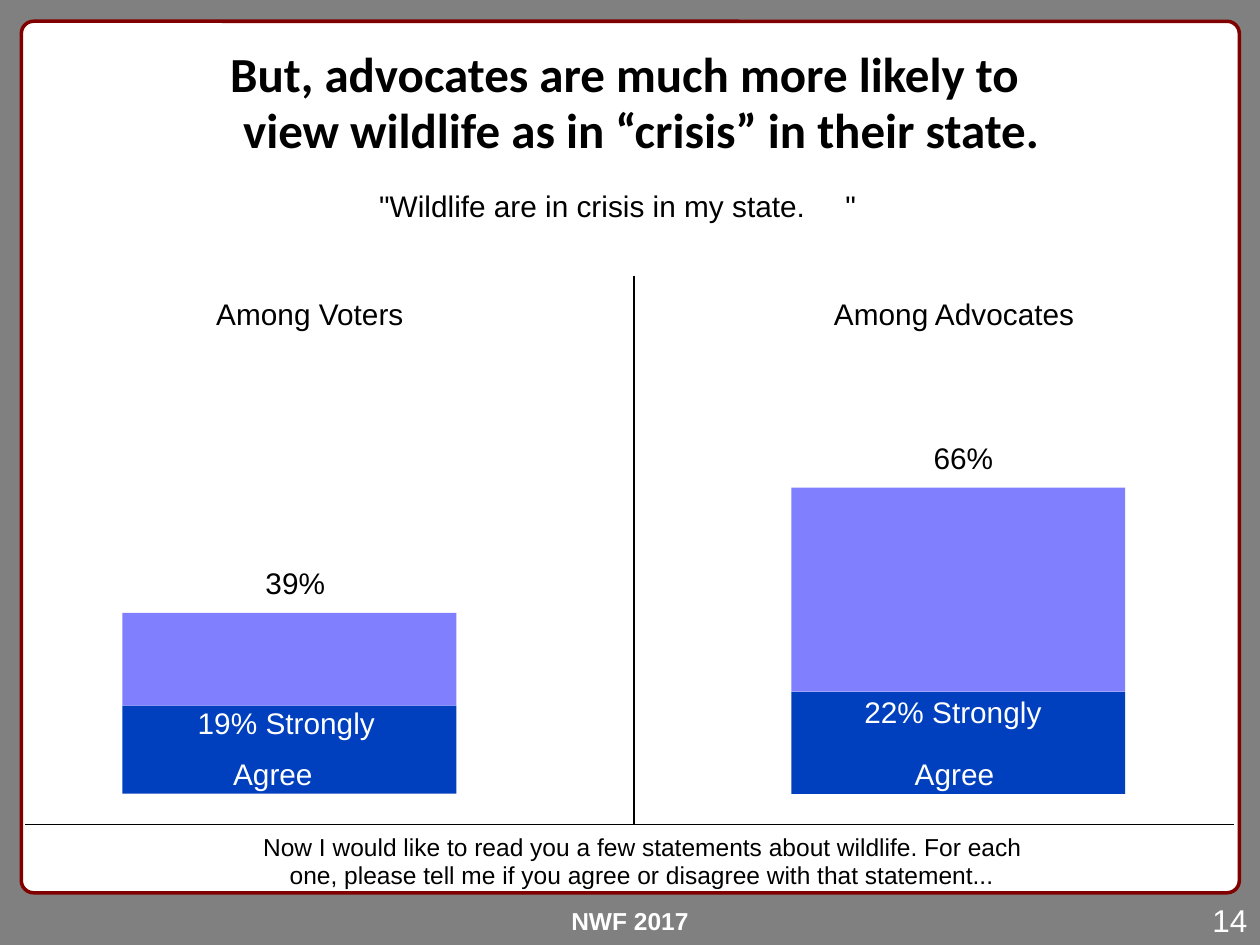
from dataclasses import dataclass

from lxml.etree import SubElement
from pptx import Presentation
from pptx.dml.color import RGBColor
from pptx.enum.shapes import MSO_CONNECTOR, MSO_SHAPE
from pptx.enum.text import PP_ALIGN
from pptx.oxml.ns import qn
from pptx.util import Pt


@dataclass(frozen=True)
class Theme:
    back: str = "808080"
    white: str = "FFFFFF"
    black: str = "000000"
    frame: str = "800000"
    dark: str = "0040BF"
    light: str = "8080FF"
    sans: str = "Arial"
    head: str = "Calibri"
    title: int = 28
    page: int = 18
    body: int = 17
    note: int = 14


@dataclass(frozen=True)
class Label:
    text: str
    left: float
    top: float
    width: float
    height: float = 20.2
    size: int = Theme.body
    color: str = Theme.black
    font: str = Theme.sans
    bold: bool = False
    align: PP_ALIGN = PP_ALIGN.LEFT


@dataclass(frozen=True)
class Group:
    name: str
    strong: int
    total: int
    left: float
    name_x: float
    total_x: float
    strong_x: float
    strong_y: float
    agree_x: float


THEME = Theme()
BASE = 453.6    # foot of the bars
UNIT = 2.65     # bar height for one percent
BAR = 190.8     # bar width


def paint(fill, color: str) -> None:
    fill.solid()
    fill.fore_color.rgb = RGBColor.from_string(color)


def write(slide, item: Label) -> None:
    box = slide.shapes.add_textbox(
        Pt(item.left), Pt(item.top), Pt(item.width), Pt(item.height))
    frame = box.text_frame
    frame.margin_left = frame.margin_right = 0
    frame.margin_top = frame.margin_bottom = 0
    frame.word_wrap = False
    frame.text = item.text
    para = frame.paragraphs[0]
    para.alignment = item.align
    font = para.runs[0].font
    font.name, font.size, font.bold = item.font, Pt(item.size), item.bold
    font.color.rgb = RGBColor.from_string(item.color)


def block(slide, left: float, top: float, height: float, color: str) -> None:
    rect = slide.shapes.add_shape(
        MSO_SHAPE.RECTANGLE, Pt(left), Pt(top), Pt(BAR), Pt(height))
    rect.shadow.inherit = False
    paint(rect.fill, color)
    rect.line.fill.background()


def rule(slide, x1: float, y1: float, x2: float, y2: float,
         width: float) -> None:
    line = slide.shapes.add_connector(
        MSO_CONNECTOR.STRAIGHT, Pt(x1), Pt(y1), Pt(x2), Pt(y2))
    line.line.width = Pt(width)
    paint(line.line.fill, THEME.black)
    SubElement(line._element.spPr, qn("a:effectLst"))


def column(slide, group: Group) -> None:
    mid = BASE - group.strong * UNIT
    top = BASE - group.total * UNIT
    block(slide, group.left, mid, BASE - mid, THEME.dark)
    block(slide, group.left, top, mid - top, THEME.light)
    write(slide, Label(group.name, group.name_x, 169.2, 150))
    write(slide, Label(f"{group.total}%", group.total_x, top - 27.7, 48))
    write(slide, Label(f"{group.strong}% Strongly", group.strong_x,
                       group.strong_y, 108, color=THEME.white))
    write(slide, Label("Agree", group.agree_x, 432, 60, color=THEME.white))


def panel(slide) -> None:
    card = slide.shapes.add_shape(
        MSO_SHAPE.ROUNDED_RECTANGLE, Pt(12.2), Pt(12.2), Pt(696), Pt(498))
    card.adjustments[0] = 0.014
    card.shadow.inherit = False
    paint(card.fill, THEME.white)
    paint(card.line.fill, THEME.frame)
    card.line.width = Pt(2)


LABELS = [
    # Footer
    Label("NWF 2017", 174, 517.7, 372, 17, THEME.note, THEME.white,
          bold=True, align=PP_ALIGN.CENTER),
    Label("14", 609, 514.6, 103.8, 21.6, THEME.page, THEME.white,
          align=PP_ALIGN.RIGHT),
    # Title
    Label("But, advocates are much more likely to", 125.8, 25, 462, 34,
          THEME.title, font=THEME.head, bold=True, align=PP_ALIGN.CENTER),
    Label("view wildlife as in “crisis” in their state.", 99.3, 56.9, 534, 34,
          THEME.title, font=THEME.head, bold=True, align=PP_ALIGN.CENTER),
    # Statement
    Label('"Wildlife are in crisis in my state.', 216.7, 107.3, 266.4),
    Label('"', 483.1, 107.3, 12),
    # Question wording
    Label("Now I would like to read you a few statements about wildlife."
          " For each", 147.3, 475.2, 440, 17, THEME.note,
          align=PP_ALIGN.CENTER),
    Label("one, please tell me if you agree or disagree with that"
          " statement...", 162.9, 491.2, 408, 17, THEME.note,
          align=PP_ALIGN.CENTER),
]

GROUPS = [
    Group("Among Voters", 19, 39, 70, 123.6, 151.7, 113, 402.5, 133.2),
    Group("Among Advocates", 22, 66, 452.2, 476.6, 533.5, 493.9, 396.5,
          522.7),
]


def main() -> None:
    deck = Presentation()
    deck.slide_width, deck.slide_height = Pt(720), Pt(540)
    slide = deck.slides.add_slide(deck.slide_layouts[6])
    paint(slide.background.fill, THEME.back)
    panel(slide)
    for item in LABELS:
        write(slide, item)
    # Dividers
    rule(slide, 14.4, 471.2, 705, 471.2, 0.25)
    rule(slide, 362.2, 157.7, 362.2, 471.2, 0.88)
    # Stacked bars
    for group in GROUPS:
        column(slide, group)
    deck.save("out.pptx")


if __name__ == "__main__":
    main()
